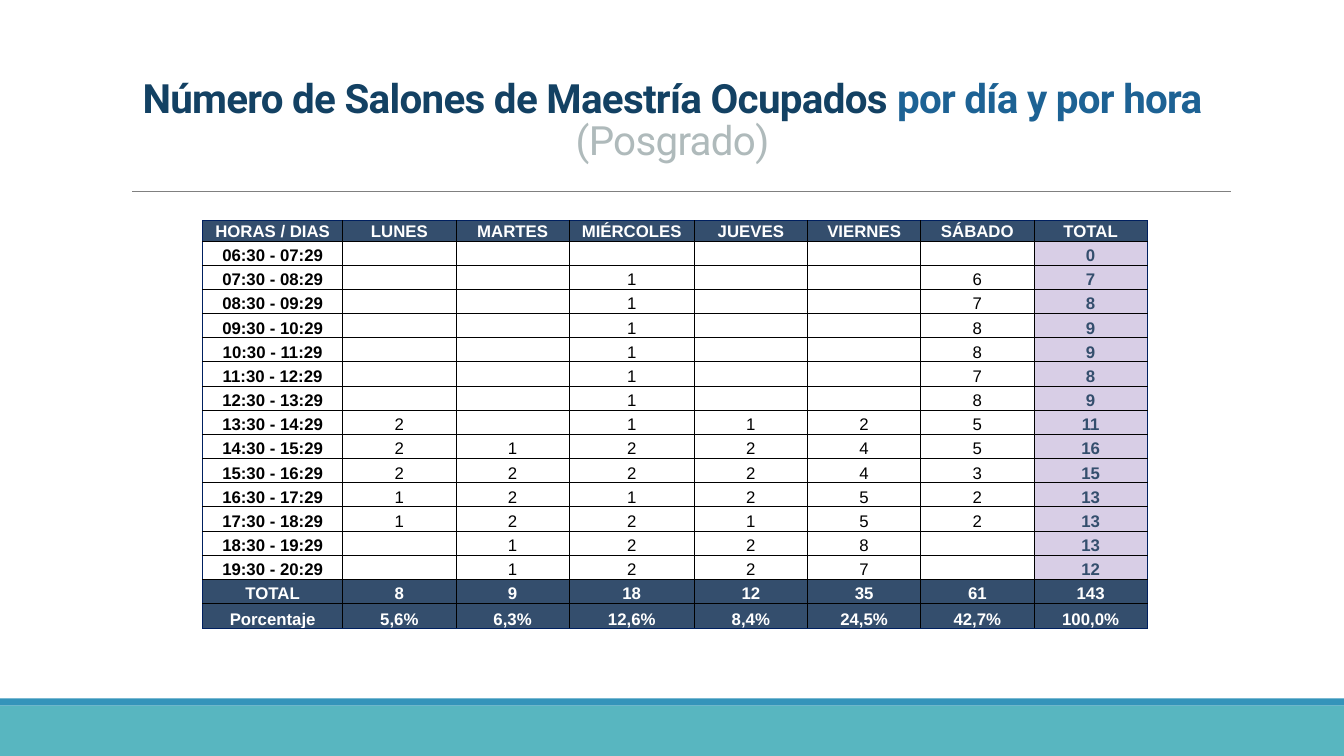
from lxml.etree import SubElement
from pptx import Presentation
from pptx.dml.color import RGBColor
from pptx.enum.shapes import MSO_CONNECTOR, MSO_SHAPE
from pptx.enum.text import MSO_ANCHOR, MSO_AUTO_SIZE, PP_ALIGN
from pptx.oxml import parse_xml
from pptx.oxml.ns import nsdecls, qn
from pptx.util import Inches, Pt

NAVY, LILAC, WHITE, BLACK = "344E6D", "D8CEE6", "FFFFFF", "000000"
GRID, FRAME = (BLACK, 0.5), ("002060", 1)
HEADINGS = ["HORAS / DIAS", "LUNES", "MARTES", "MIÉRCOLES", "JUEVES",
            "VIERNES", "SÁBADO", "TOTAL"]
FIRST_HOUR = 6
# One row per hour, Monday to Saturday
ROOMS = [
    (0, 0, 0, 0, 0, 0),
    (0, 0, 1, 0, 0, 6),
    (0, 0, 1, 0, 0, 7),
    (0, 0, 1, 0, 0, 8),
    (0, 0, 1, 0, 0, 8),
    (0, 0, 1, 0, 0, 7),
    (0, 0, 1, 0, 0, 8),
    (2, 0, 1, 1, 2, 5),
    (2, 1, 2, 2, 4, 5),
    (2, 2, 2, 2, 4, 3),
    (1, 2, 1, 2, 5, 2),
    (1, 2, 2, 1, 5, 2),
    (0, 1, 2, 2, 8, 0),
    (0, 1, 2, 2, 7, 0),
]


def color(value):
    return RGBColor.from_string(value)


def add_run(paragraph, text, font_name, size, ink, bold):
    run = paragraph.add_run()
    run.text = text
    font = run.font
    font.name, font.size, font.bold = font_name, Pt(size), bold
    font.color.rgb = color(ink)
    return run


def add_footer(slide, left, top, width, height):
    stripe = 0.07
    bands = [(top, stripe, "3494BA"), (top + stripe, height - stripe, "58B6C0")]
    for band_top, band_height, fill in bands:
        band = slide.shapes.add_shape(
            MSO_SHAPE.RECTANGLE, Inches(left), Inches(band_top),
            Inches(width), Inches(band_height))
        band.shadow.inherit = False
        band.fill.solid()
        band.fill.fore_color.rgb = color(fill)
        band.line.fill.background()


def add_heading(slide, left, top, width, height):
    title = slide.shapes.title
    title.left, title.top = Inches(left), Inches(top)
    title.width, title.height = Inches(width), Inches(height)
    frame = title.text_frame
    frame.word_wrap = True
    frame.auto_size = MSO_AUTO_SIZE.NONE
    frame.vertical_anchor = MSO_ANCHOR.BOTTOM
    line = frame.paragraphs[0]
    line.alignment = PP_ALIGN.CENTER
    line.line_spacing = 0.85
    pieces = [("Número de Salones de Maestría Ocupados ", "134163", True),
              ("por día y por hora", "1D6294", True),
              ("(Posgrado)", "AFBABB", False)]
    for text, ink, bold in pieces:
        if not bold:
            line.add_line_break()
        run = add_run(line, text, "Roboto", 28.8, ink, bold)
        run.font._element.set("spc", "-50")

    # Rule below the title
    rule_y = Inches(top + height + 0.23)
    rule = slide.shapes.add_connector(
        MSO_CONNECTOR.STRAIGHT, Inches(left + 0.39), rule_y,
        Inches(left + width - 0.21), rule_y)
    rule.line.color.rgb = color("808080")
    rule.line.width = Pt(0.5)
    SubElement(rule._element.spPr, qn("a:effectLst"))


def set_borders(cell, edges):
    properties = cell._tc.get_or_add_tcPr()
    for place, (side, (ink, points)) in enumerate(edges.items()):
        properties.insert(place, parse_xml(
            f'<a:ln{side} {nsdecls("a")} w="{Pt(points)}"><a:solidFill>'
            f'<a:srgbClr val="{ink}"/></a:solidFill></a:ln{side}>'))


def fill_cell(cell, text, ink, bold, fill, anchor):
    cell.margin_left = cell.margin_right = cell.margin_top = Inches(0.01)
    cell.margin_bottom = 0
    cell.vertical_anchor = anchor
    if fill:
        cell.fill.solid()
        cell.fill.fore_color.rgb = color(fill)
    else:
        cell.fill.background()
    paragraph = cell.text_frame.paragraphs[0]
    paragraph.alignment = PP_ALIGN.CENTER
    if text:
        add_run(paragraph, text, "Arial", 12, ink, bold)
    else:
        # Keeps empty rows at their set height
        SubElement(paragraph._p, qn("a:endParaRPr"), sz="1200")


def table_rows():
    hours = [[f"{hour:02}:30 - {hour + 1:02}:29",
              *(str(count or "") for count in counts), str(sum(counts))]
             for hour, counts in enumerate(ROOMS, FIRST_HOUR)]
    totals = [sum(day) for day in zip(*ROOMS)]
    totals.append(sum(totals))
    shares = [f"{100 * total / totals[-1]:.1f}%".replace(".", ",")
              for total in totals]
    return [HEADINGS, *hours, ["TOTAL", *map(str, totals)],
            ["Porcentaje", *shares]]


def add_occupancy_table(slide, left, top, width, height):
    rows = table_rows()
    last_row, last_column = len(rows) - 1, len(HEADINGS) - 1
    table = slide.shapes.add_table(
        len(rows), len(HEADINGS), Inches(left), Inches(top),
        Inches(width), Inches(height)).table
    table.horz_banding = False

    # Wider columns for the hours and for Wednesday
    wide = {0: 1.39, 3: 1.24}
    narrow = (width - sum(wide.values())) / (len(HEADINGS) - len(wide))
    for c, column in enumerate(table.columns):
        column.width = Inches(wide.get(c, narrow))
    special = {0: 0.2, last_row: 0.25}
    regular = (height - sum(special.values())) / (len(rows) - len(special))
    for r, row in enumerate(table.rows):
        row.height = Inches(special.get(r, regular))

    for r, texts in enumerate(rows):
        for c, text in enumerate(texts):
            cell = table.cell(r, c)
            anchor = MSO_ANCHOR.BOTTOM if r else MSO_ANCHOR.MIDDLE
            if r == 0 or r >= last_row - 1:
                style = WHITE, True, NAVY
            elif c == last_column:
                style = NAVY, True, LILAC
            else:
                style = BLACK, c == 0, None
            fill_cell(cell, text, *style, anchor)
            set_borders(cell, {
                "L": FRAME if c == 0 else GRID,
                "R": FRAME if c == last_column else GRID,
                "T": FRAME if r == 0 else GRID,
                "B": FRAME if r == last_row else GRID})


def main():
    deck = Presentation()
    deck.slide_width, deck.slide_height = Inches(13.33), Inches(7.5)
    slide = deck.slides.add_slide(deck.slide_layouts[5])
    add_footer(slide, 0, 6.93, 13.33, 0.57)
    add_heading(slide, 0.92, 0.4, 11.5, 1.27)
    add_occupancy_table(slide, 2.01, 2.19, 9.37, 4.05)
    deck.save("out.pptx")


if __name__ == "__main__":
    main()
